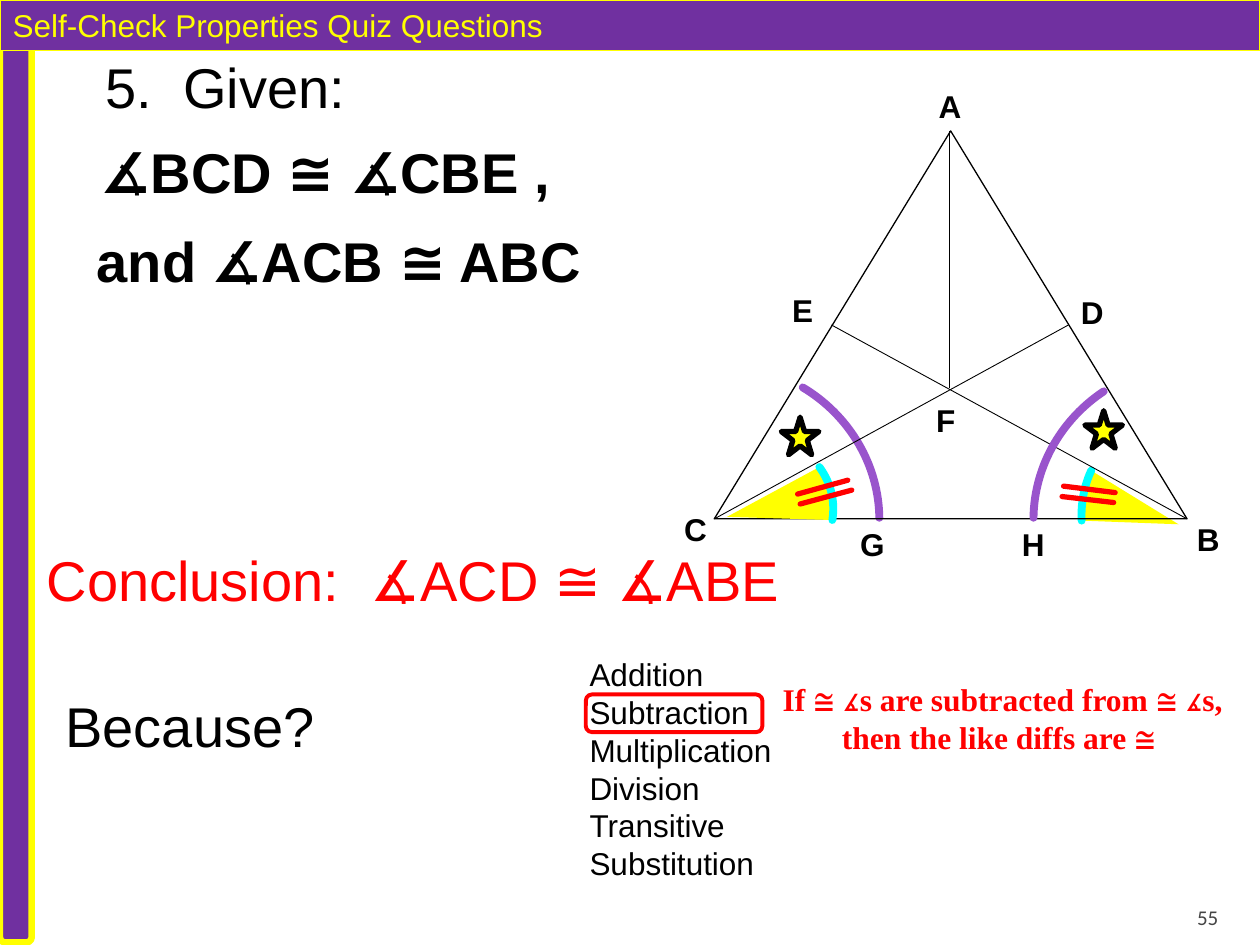
from dataclasses import dataclass
from lxml.etree import SubElement
from pptx import Presentation
from pptx.dml.color import RGBColor
from pptx.enum.shapes import MSO_CONNECTOR, MSO_SHAPE
from pptx.enum.text import MSO_ANCHOR, MSO_AUTO_SIZE, PP_ALIGN
from pptx.oxml.ns import qn
from pptx.util import Cm, Pt

HEX = {"black": "000000", "red": "FF0000", "yellow": "FFFF00", "cyan": "00FFFF",
       "purple": "7030A0", "violet": "9954CC", "gray": "454545"}


@dataclass
class Box:
    x: float
    y: float
    w: float
    h: float

    def place(self, shape) -> None:
        shape.left, shape.top = Cm(self.x), Cm(self.y)
        shape.width, shape.height = Cm(self.w), Cm(self.h)


@dataclass
class Arc:
    box: Box
    turn: float
    start: float
    end: float
    line: str
    fill: str = ""
    flip: bool = False


@dataclass
class Note:
    text: str
    box: Box
    size: int = 32
    color: str = "black"
    bold: bool = False
    font: str = "Arial"
    align: PP_ALIGN = PP_ALIGN.LEFT


# Arcs under and over the lines of the figure
UNDER = (
    Arc(Box(21.84, 8.41, 3.84, 4.32), 337.7, 306.15, 335.53, "cyan", "yellow", True),
    Arc(Box(11.56, 7.39, 6.2, 5.94), 30.7, 270.15, 330.76, "violet"),
)
OVER = (
    Arc(Box(12.93, 8.26, 3.45, 4.32), 77.7, 253.98, 284.03, "cyan", "yellow"),
    Arc(Box(20.8, 7.39, 6.2, 5.94), 329.3, 273.04, 330.76, "violet", flip=True),
)
POINTS = {"A": (19.15, 2.64), "B": (23.93, 10.46), "C": (14.4, 10.46),
          "D": (21.54, 6.55), "E": (16.76, 6.55), "F": (19.15, 7.82)}
LABELS = {"A": (18.67, 1.63), "F": (18.62, 7.95), "E": (15.72, 5.74),
          "C": (13.54, 10.16), "G": (17.09, 10.46), "H": (20.35, 10.46),
          "B": (23.88, 10.36), "D": (21.54, 5.79)}
TICKS = (((21.44, 9.8), (22.48, 9.93)), ((21.41, 10.01), (22.45, 10.13)),
         ((17.09, 9.68), (16.08, 9.96)), ((17.17, 9.88), (16.13, 10.16)))
STARS = ((15.75, 8.41), (21.87, 8.28))
NOTES = (
    Note("5.  Given:", Box(1.88, 0.94, 5.92, 1.63)),
    Note("∡BCD ≅ ∡CBE ,", Box(1.78, 2.64, 13.67, 1.63), bold=True),
    Note("and ∡ACB ≅ ABC", Box(1.7, 4.45, 10.62, 1.63), bold=True),
    Note("Conclusion:  ∡ACD ≅ ∡ABE", Box(0.69, 10.87, 17.48, 1.63), color="red"),
    Note("Because?", Box(1.07, 13.82, 5.92, 1.63)),
    Note("If ≅ ∡s are subtracted from ≅ ∡s,\nthen the like diffs are ≅ ",
         Box(15.49, 13.59, 9.45, 1.8), 18, "red", True, "Times New Roman",
         PP_ALIGN.CENTER),
)
TITLE = Note("Self-Check Properties Quiz Questions", Box(0, 0, 25.4, 1.02), 18, "yellow")
CHOICES = Note("Addition\nSubtraction\nMultiplication\nDivision\nTransitive\nSubstitution",
               Box(11.63, 13.08, 10.72, 4.88), 18)
NUMBER = Note("55", Box(22.78, 17.98, 2.03, 0.76), 12, "gray", font="Calibri",
              align=PP_ALIGN.RIGHT)


def rgb(name: str) -> RGBColor:
    return RGBColor.from_string(HEX[name])


def paint(shape, line: str, width: float, fill: str = "") -> None:
    if fill:
        shape.fill.solid()
        shape.fill.fore_color.rgb = rgb(fill)
    else:
        shape.fill.background()
    shape.line.color.rgb = rgb(line)
    shape.line.width = Pt(width)


def soften(shape) -> None:
    """Give the outline round ends and corners."""
    line = shape.element.spPr.find(qn("a:ln"))
    line.set("cap", "rnd")
    SubElement(line, qn("a:round"))


def add_shape(slide, kind: MSO_SHAPE, box: Box, line: str, width: float, fill: str = ""):
    shape = slide.shapes.add_shape(kind, 0, 0, 0, 0)
    box.place(shape)
    shape.shadow.inherit = False
    paint(shape, line, width, fill)
    return shape


def add_arc(slide, arc: Arc) -> None:
    shape = add_shape(slide, MSO_SHAPE.ARC, arc.box, arc.line, 4.5, arc.fill)
    # Adjustments count 60000ths of a degree in units of 100000
    shape.adjustments[0] = arc.start * 0.6
    shape.adjustments[1] = arc.end * 0.6
    shape.rotation = arc.turn
    if arc.flip:
        shape.element.spPr.find(qn("a:xfrm")).set("flipH", "1")
    soften(shape)


def add_line(slide, start: tuple, end: tuple, color: str, width: float):
    line = slide.shapes.add_connector(
        MSO_CONNECTOR.STRAIGHT, *(Cm(v) for v in (*start, *end)))
    line.line.color.rgb = rgb(color)
    line.line.width = Pt(width)
    SubElement(line.element.spPr, qn("a:effectLst"))
    return line


def write(shape, note: Note, anchor: MSO_ANCHOR = MSO_ANCHOR.TOP) -> None:
    note.box.place(shape)
    frame = shape.text_frame
    frame.text = note.text
    frame.word_wrap = True
    frame.auto_size = MSO_AUTO_SIZE.NONE
    frame.vertical_anchor = anchor
    for para in frame.paragraphs:
        para.alignment = note.align
        para.space_before = Pt(0)
        for run in para.runs:
            font = run.font
            font.name, font.size, font.bold = note.font, Pt(note.size), note.bold
            font.color.rgb = rgb(note.color)


def add_note(slide, note: Note, anchor: MSO_ANCHOR = MSO_ANCHOR.TOP):
    shape = slide.shapes.add_textbox(0, 0, 0, 0)
    write(shape, note, anchor)
    return shape


def add_figure(slide) -> None:
    for arc in UNDER:
        add_arc(slide, arc)
    add_shape(slide, MSO_SHAPE.ISOSCELES_TRIANGLE, Box(14.4, 2.64, 9.53, 7.82), "black", 0.75)
    for start, end in ("CD", "EB", "FA"):
        add_line(slide, POINTS[start], POINTS[end], "black", 0.5)
    for name, spot in LABELS.items():
        add_note(slide, Note(name, Box(*spot, 1.07, 1.02), 18, bold=True))
    for arc in OVER:
        add_arc(slide, arc)
    for spot in STARS:
        soften(add_shape(slide, MSO_SHAPE.STAR_5_POINT, Box(*spot, 0.76, 0.76),
                         "black", 3, "yellow"))
    for start, end in TICKS:
        soften(add_line(slide, start, end, "red", 3))


def main() -> None:
    deck = Presentation()
    deck.slide_width, deck.slide_height = Cm(25.4), Cm(19.05)
    slide = deck.slides.add_slide(deck.slide_layouts[1])
    title, body = slide.placeholders

    add_shape(slide, MSO_SHAPE.ROUNDED_RECTANGLE, Box(0, 0.2, 0.64, 18.8),
              "yellow", 3.78, "purple")
    add_figure(slide)
    for note in NOTES:
        add_note(slide, note)

    write(body, CHOICES)
    for para in body.text_frame.paragraphs:
        props = para._p.get_or_add_pPr()
        props.set("marL", "0")
        props.set("indent", "0")
        SubElement(props, qn("a:buNone"))
    add_shape(slide, MSO_SHAPE.ROUNDED_RECTANGLE, Box(11.81, 14, 3.56, 0.76), "red", 2.25)

    number = add_note(slide, NUMBER, MSO_ANCHOR.BOTTOM)
    number.text_frame.margin_bottom = 0

    write(title, TITLE, MSO_ANCHOR.MIDDLE)
    paint(title, "yellow", 0.75, "purple")
    title.element.getparent().append(title.element)  # the bar lies over the rail
    deck.save("out.pptx")


if __name__ == "__main__":
    main()
